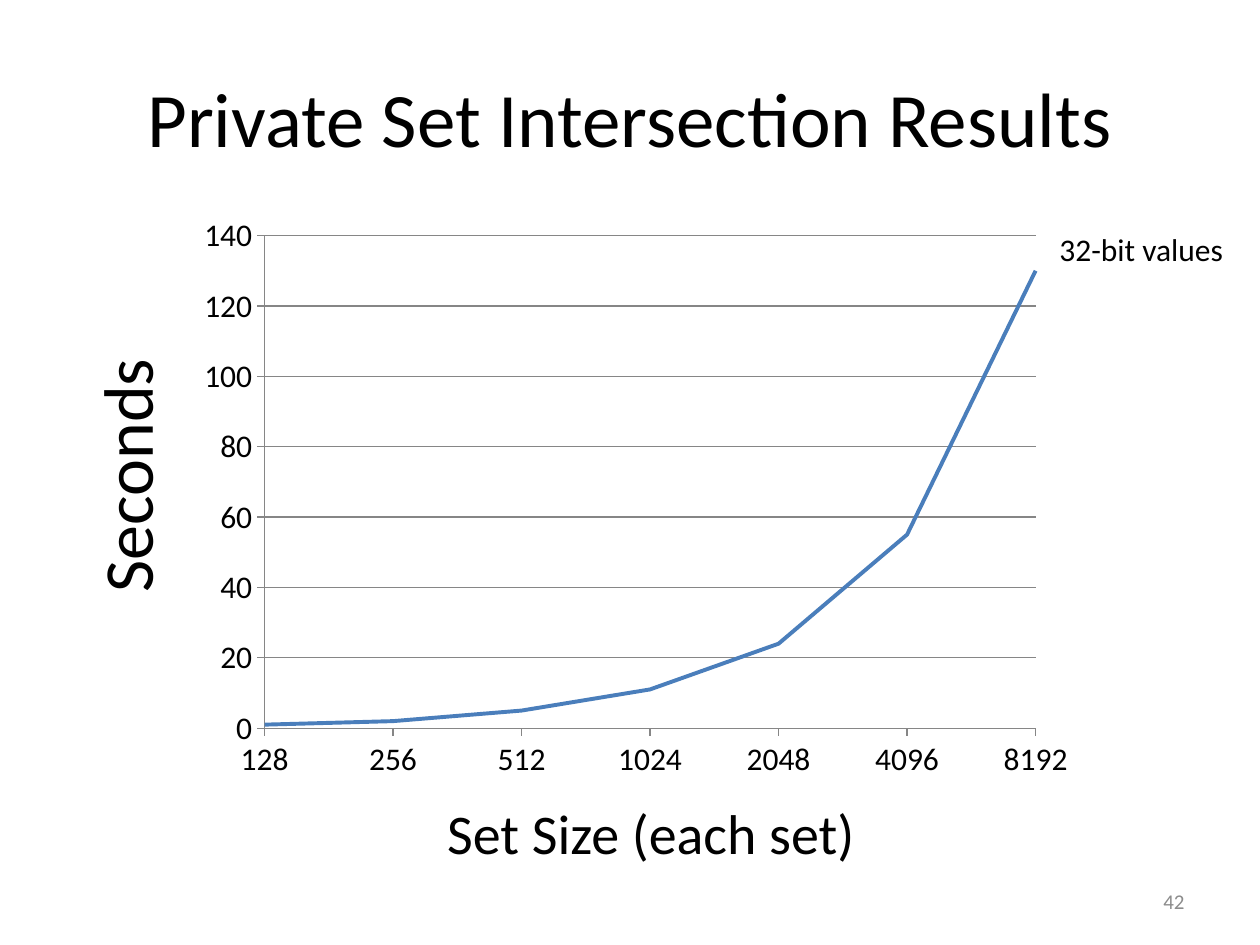
from lxml import etree
from pptx import Presentation
from pptx.chart.data import CategoryChartData
from pptx.dml.color import RGBColor
from pptx.enum.chart import XL_CHART_TYPE, XL_TICK_MARK
from pptx.enum.text import MSO_ANCHOR, PP_ALIGN
from pptx.oxml.ns import qn
from pptx.util import Inches, Pt

LEFT, CENTER, RIGHT = PP_ALIGN.LEFT, PP_ALIGN.CENTER, PP_ALIGN.RIGHT
TOP, MIDDLE = MSO_ANCHOR.TOP, MSO_ANCHOR.MIDDLE
LINE, OUTSIDE = XL_CHART_TYPE.LINE, XL_TICK_MARK.OUTSIDE

FONT = "Calibri"
COLORS = {"text": "000000", "number": "8C8C8C", "axis": "868686", "series": "4A7EBB"}

# Content: text, (left, top, width, height), size, color, alignment, anchor, wrap, rotation
TEXTS = [
    ("Private Set Intersection Results", (0.5, 0.3, 9, 1.25), 44, "text", CENTER, MIDDLE, True, 0),
    ("42", (7.17, 6.95, 2.33, 0.4), 12, "number", RIGHT, MIDDLE, True, 0),
    ("Seconds", (-0.04, 3.38, 2.07, 0.77), 40, "text", LEFT, TOP, False, 270),
    ("Set Size (each set)", (3.45, 6.29, 3.47, 0.64), 32, "text", LEFT, TOP, False, 0),
    ("32-bit values", (8.31, 1.78, 1.51, 0.4), 18, "text", LEFT, TOP, False, 0),
]
SECONDS = {"128": 1, "256": 2, "512": 5, "1024": 11, "2048": 24, "4096": 55, "8192": 130}
CHART_BOX = (1.48, 1.62, 7.14, 4.65)
PLOT_BOX = (2.1, 1.87, 6.12, 3.91)


def color(name):
    return RGBColor.from_string(COLORS[name])


def style_font(font, size, color_name):
    for name, value in {"name": FONT, "size": Pt(size)}.items():
        setattr(font, name, value)
    font.color.rgb = color(color_name)


def style_line(line, width, color_name):
    line.width = Pt(width)
    line.color.rgb = color(color_name)


def add_text(slide, text, box, size, color_name, alignment, anchor, wrap, rotation):
    shape = slide.shapes.add_textbox(*map(Inches, box))
    shape.rotation = rotation
    frame = shape.text_frame
    frame.word_wrap, frame.vertical_anchor = wrap, anchor
    paragraph = frame.paragraphs[0]
    paragraph.alignment = alignment
    run = paragraph.add_run()
    run.text = text
    style_font(run.font, size, color_name)


def place_plot(chart):
    """Fix the inner plot area, as fractions of the chart box."""
    left, top, width, height = CHART_BOX
    plot_left, plot_top, plot_width, plot_height = PLOT_BOX
    values = {
        "layoutTarget": "inner", "xMode": "edge", "yMode": "edge",
        "x": (plot_left - left) / width, "y": (plot_top - top) / height,
        "w": plot_width / width, "h": plot_height / height,
    }
    plot_area = chart._chartSpace.find(".//" + qn("c:plotArea"))
    layout = plot_area.find(qn("c:layout"))
    if layout is None:
        layout = etree.Element(qn("c:layout"))
        plot_area.insert(0, layout)
    manual = etree.SubElement(layout, qn("c:manualLayout"))
    for name, value in values.items():
        etree.SubElement(manual, qn("c:" + name)).set("val", str(value))


def start_on_axis(chart):
    """Put the first and last points on the edges of the plot."""
    value_axis = chart._chartSpace.find(".//" + qn("c:valAx"))
    cross_between = etree.Element(qn("c:crossBetween"), val="midCat")
    value_axis.find(qn("c:crosses")).addnext(cross_between)


def add_line_chart(slide):
    data = CategoryChartData()
    data.categories = list(SECONDS)
    data.add_series("Series 1", list(SECONDS.values()))
    chart = slide.shapes.add_chart(LINE, *map(Inches, CHART_BOX), data).chart
    chart.has_legend = chart.has_title = False
    style_font(chart.font, 18, "text")

    # Axes
    for axis in (chart.category_axis, chart.value_axis):
        axis.major_tick_mark = OUTSIDE
        style_line(axis.format.line, 0.75, "axis")
        style_font(axis.tick_labels.font, 18, "text")
    value_axis = chart.value_axis
    limits = {"minimum_scale": 0, "maximum_scale": 140, "major_unit": 20}
    for name, value in limits.items():
        setattr(value_axis, name, value)
    style_line(value_axis.major_gridlines.format.line, 0.75, "axis")

    # Series
    plot = chart.plots[0]
    plot.vary_by_categories = False
    series = plot.series[0]
    series.smooth = False
    style_line(series.format.line, 2.25, "series")

    start_on_axis(chart)
    place_plot(chart)


def main():
    presentation = Presentation()
    presentation.slide_width, presentation.slide_height = Inches(10), Inches(7.5)
    slide = presentation.slides.add_slide(presentation.slide_layouts[6])
    add_line_chart(slide)
    for text in TEXTS:
        add_text(slide, *text)
    presentation.save("out.pptx")


if __name__ == "__main__":
    main()
